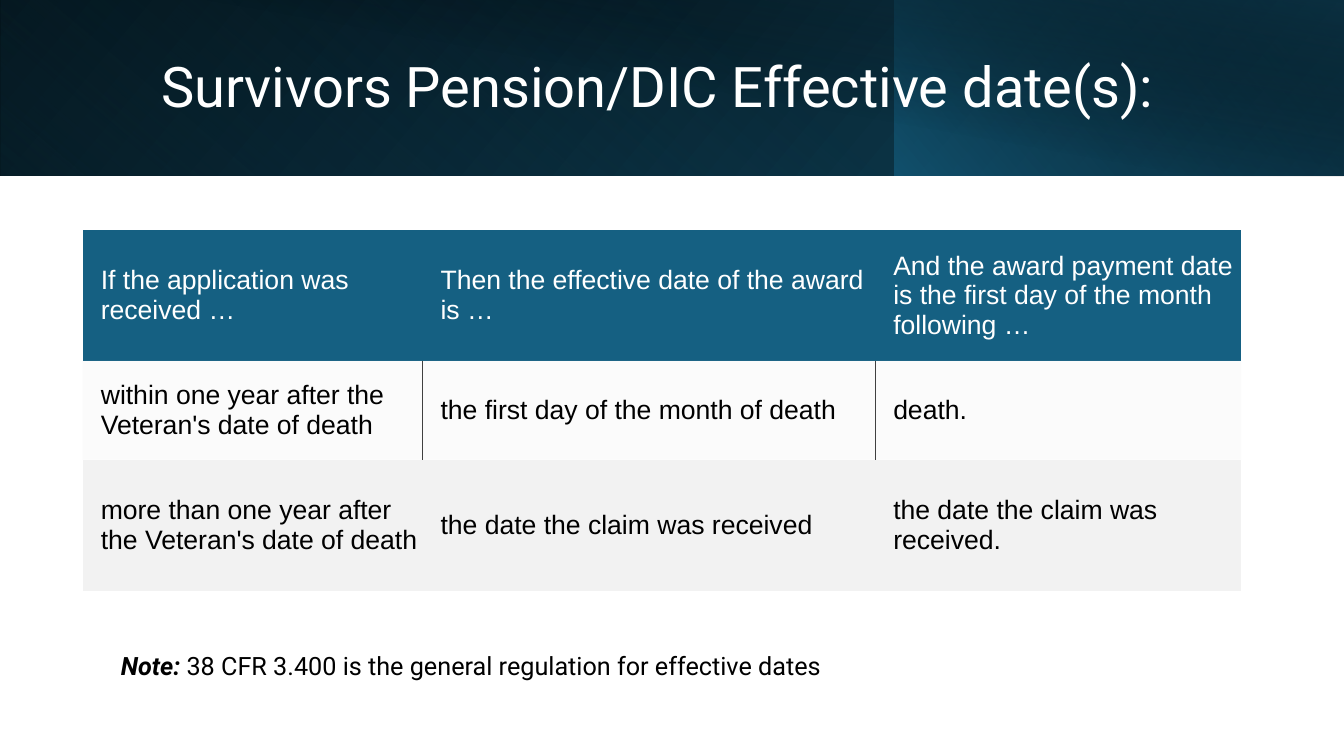
"""Build the slide on effective dates for Survivors Pension and DIC."""
from lxml.etree import SubElement
from pptx import Presentation
from pptx.dml.color import RGBColor
from pptx.enum.shapes import MSO_SHAPE
from pptx.enum.text import MSO_ANCHOR, MSO_AUTO_SIZE, PP_ALIGN
from pptx.oxml import parse_xml
from pptx.oxml.ns import nsdecls, qn
from pptx.util import Inches, Pt

COLORS = {
    "black": "000000",
    "white": "FFFFFF",
    "teal": "156082",
    "deep": "104862",
    "navy": "0B3041",
    "grey": "F2F2F2",
    "rule": "404040",
}


def style_font(font, name, size, color):
    font.name = name
    font.size = Pt(size)
    font.color.rgb = RGBColor.from_string(COLORS[color])


def fill_gradient(shape, angle, stops):
    stop_xml = "".join(
        f'<a:gs pos="{position * 1000}"><a:srgbClr val="{COLORS[color]}">'
        f'<a:alpha val="{opacity * 1000}"/></a:srgbClr></a:gs>'
        for position, color, opacity in stops
    )
    shape.fill.background()
    no_fill = shape._element.spPr.find(qn("a:noFill"))
    no_fill.getparent().replace(no_fill, parse_xml(
        f'<a:gradFill rotWithShape="1" {nsdecls("a")}><a:gsLst>{stop_xml}</a:gsLst>'
        f'<a:lin ang="{angle * 60000}" scaled="0"/></a:gradFill>'
    ))


prs = Presentation()
prs.slide_width = Inches(13.33)
prs.slide_height = Inches(7.5)
slide = prs.slides.add_slide(prs.slide_layouts[5])

header_bands = [
    (0, 13.33, 1.74, 0, True, 140, [(0, "black", 100), (100, "deep", 100)]),
    (0, 8.88, 1.74, 180, True, 230, [(20, "teal", 0), (100, "navy", 55)]),
    (8.87, 4.46, 1.74, 0, True, 220, [(0, "teal", 66), (100, "black", 30)]),
    (0.5, 12.83, 1.75, 0, False, 280, [(50, "black", 0), (99, "navy", 52)]),
]
for left, width, height, rotation, flipped, angle, stops in header_bands:
    band = slide.shapes.add_shape(
        MSO_SHAPE.RECTANGLE, Inches(left), 0, Inches(width), Inches(height))
    band.shadow.inherit = False
    band.line.fill.background()
    band.rotation = rotation
    if flipped:
        band._element.spPr.xfrm.set("flipH", "1")
    fill_gradient(band, angle, stops)

title = slide.shapes.title
slide.shapes._spTree.append(title._element)
title.left, title.top = Inches(1.5), Inches(0.32)
title.width, title.height = Inches(10.82), Inches(1.13)
title.text_frame.text = "Survivors Pension/DIC Effective date(s):"
title.text_frame.vertical_anchor = MSO_ANCHOR.MIDDLE
title.text_frame.auto_size = MSO_AUTO_SIZE.NONE
heading = title.text_frame.paragraphs[0]
heading.alignment = PP_ALIGN.LEFT
heading.line_spacing = 0.9
style_font(heading.runs[0].font, "Roboto", 40, "white")

date_rules = [
    ("If the application was received …",
     "Then the effective date of the award is …",
     "And the award payment date is the first day of the month following …"),
    ("within one year after the Veteran's date of death",
     "the first day of the month of death",
     "death."),
    ("more than one year after the Veteran's date of death",
     "the date the claim was received",
     "the date the claim was received."),
]
column_widths = [3.37, 4.49, 3.63]
row_heights = [1.3, 0.98, 1.3]
row_colors = [("teal", "white"), ("grey", "black"), ("grey", "black")]

table_frame = slide.shapes.add_table(
    3, 3, Inches(0.82), Inches(2.28), Inches(11.5), Inches(3.58))
table = table_frame.table
table.first_row = False
table.horz_banding = False
table._tbl.tblPr.find(qn("a:tableStyleId")).text = "{2D5ABB26-0587-4C30-8999-92F81FD0307C}"
for column, width in zip(table.columns, column_widths):
    column.width = Inches(width)
for row, height in zip(table.rows, row_heights):
    row.height = Inches(height)

for row_index, (wordings, (fill_color, text_color)) in enumerate(zip(date_rules, row_colors)):
    for column_index, wording in enumerate(wordings):
        cell = table.cell(row_index, column_index)
        cell.text_frame.text = wording
        cell.vertical_anchor = MSO_ANCHOR.MIDDLE
        cell.margin_left, cell.margin_right = Inches(0.18), Inches(0.01)
        cell.margin_top = cell.margin_bottom = Inches(0.14)
        style_font(cell.text_frame.paragraphs[0].runs[0].font, "Arial", 19, text_color)
        cell.fill.solid()
        cell.fill.fore_color.rgb = RGBColor.from_string(COLORS[fill_color])
        if row_index == 1:
            cell_props = cell._tc.tcPr
            fill_tint = cell_props.find(qn("a:solidFill")).find(qn("a:srgbClr"))
            SubElement(fill_tint, qn("a:alpha")).set("val", "30000")
            sides = [side for side, inner in
                     (("lnR", column_index < 2), ("lnL", column_index > 0)) if inner]
            for side in sides:
                cell_props.insert(0, parse_xml(
                    f'<a:{side} w="6350" {nsdecls("a")}><a:solidFill>'
                    f'<a:srgbClr val="{COLORS["rule"]}"/></a:solidFill></a:{side}>'
                ))

note = slide.shapes.add_textbox(Inches(1.1), Inches(6.4), Inches(7.94), Inches(0.4))
note.text_frame.word_wrap = True
note.text_frame.auto_size = MSO_AUTO_SIZE.SHAPE_TO_FIT_TEXT
note_line = note.text_frame.paragraphs[0]
note_parts = [
    ("Note: ", True),
    ("38 CFR 3.400 is the general regulation for effective dates", False),
]
for wording, emphasised in note_parts:
    run = note_line.add_run()
    run.text = wording
    style_font(run.font, "Roboto", 18, "black")
    run.font.bold = run.font.italic = emphasised

prs.save("out.pptx")
